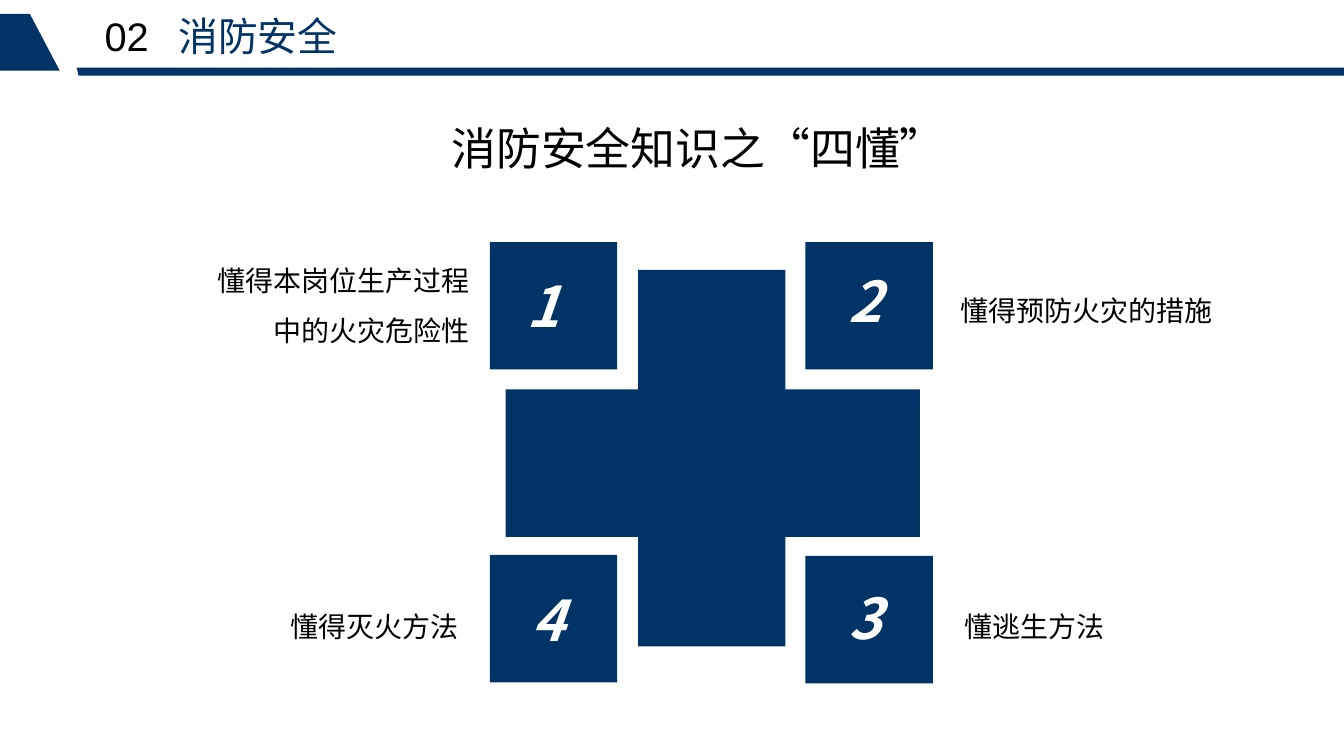
from dataclasses import dataclass

from pptx import Presentation
from pptx.dml.color import RGBColor
from pptx.enum.shapes import MSO_SHAPE as Preset
from pptx.enum.text import MSO_ANCHOR as Anchor, MSO_AUTO_SIZE as AutoSize, PP_ALIGN as Align
from pptx.oxml.ns import qn
from pptx.util import Pt

PX = 9525
NAVY, BLACK, WHITE = "003366", "000000", "FFFFFF"
CJK = "Noto Sans CJK SC"
TILE = 128


@dataclass(frozen=True)
class Box:
    """A rectangle in px."""
    left: int
    top: int
    width: int
    height: int

    def emu(self) -> tuple[int, int, int, int]:
        """Return the rectangle in EMU."""
        return self.left * PX, self.top * PX, self.width * PX, self.height * PX


@dataclass(frozen=True)
class Point:
    """One numbered rule: its tile, its number and its label."""
    number: str
    label: str
    tile: tuple[int, int]
    number_at: tuple[int, int]
    label_box: Box


POINTS = [
    Point("1", "懂得本岗位生产过程中的火灾危险性", (492, 243), (478, 268), Box(195, 243, 286, 111)),
    Point("2", "懂得预防火灾的措施", (809, 243), (801, 263), Box(951, 273, 277, 60)),
    Point("3", "懂逃生方法", (809, 558), (801, 581), Box(957, 590, 162, 60)),
    Point("4", "懂得灭火方法", (492, 557), (483, 583), Box(278, 590, 192, 60)),
]
CROSS = [Box(508, 391, 416, 148), Box(641, 271, 148, 378)]
HEADER_OUTLINES = [
    [(0, 14), (30, 14), (60, 71), (0, 71)],
    [(77, 68), (1350, 68), (1350, 76), (79, 76)],
]


def rgb(colour: str) -> RGBColor:
    """Turn a hex string into a colour."""
    return RGBColor.from_string(colour)


def paint(shape, colour: str) -> None:
    """Give a shape a flat fill without line or shadow."""
    shape.fill.solid()
    shape.fill.fore_color.rgb = rgb(colour)
    shape.line.fill.background()
    shape.shadow.inherit = False


def style_run(run, size: float, colour: str, name: str = CJK, strong: bool = False) -> None:
    """Set size, colour and typeface of a run, bold italic if strong."""
    run.font.size = Pt(size)
    run.font.color.rgb = rgb(colour)
    run.font.bold = run.font.italic = strong
    run.font.name = name
    east_asian = run.font._element.makeelement(qn("a:ea"), {"typeface": name})
    run.font._element.find(qn("a:latin")).addnext(east_asian)


def add_block(slide, box: Box) -> None:
    """Draw a navy rectangle."""
    paint(slide.shapes.add_shape(Preset.RECTANGLE, *box.emu()), NAVY)


def add_outline(slide, corners: list[tuple[int, int]]) -> None:
    """Draw a navy polygon."""
    builder = slide.shapes.build_freeform(*corners[0], scale=PX)
    builder.add_line_segments(corners[1:], close=True)
    paint(builder.convert_to_shape(), NAVY)


def add_text(slide, box: Box, text: str, size: float, colour: str, align: Align,
             spacing: float = 1.0, strong: bool = False, anchor: Anchor = Anchor.TOP) -> None:
    """Add a one-paragraph text box."""
    frame = slide.shapes.add_textbox(*box.emu()).text_frame
    frame.word_wrap = True
    frame.vertical_anchor = anchor
    frame.text = text
    paragraph = frame.paragraphs[0]
    paragraph.alignment = align
    paragraph.line_spacing = spacing
    style_run(paragraph.runs[0], size, colour, strong=strong)


def fill_title(slide, box: Box, number: str, section: str, section_offset: int) -> None:
    """Write section number and name into the title, split by a tab stop."""
    title = slide.shapes.title
    title.left, title.top, title.width, title.height = box.emu()
    frame = title.text_frame
    frame.margin_left = frame.margin_top = frame.margin_right = frame.margin_bottom = 0
    frame.auto_size = AutoSize.NONE
    frame.vertical_anchor = Anchor.MIDDLE
    paragraph = frame.paragraphs[0]
    paragraph.alignment = Align.LEFT
    paragraph.line_spacing = 1.0
    properties = paragraph._p.get_or_add_pPr()
    stops = properties.makeelement(qn("a:tabLst"), {})
    stop = stops.makeelement(qn("a:tab"), {"pos": str(section_offset * PX), "algn": "l"})
    stops.append(stop)
    properties.append(stops)
    for text, colour, name in [(f"{number}\t", BLACK, "Arial"), (section, NAVY, CJK)]:
        run = paragraph.add_run()
        run.text = text
        style_run(run, 30, colour, name)


def main() -> None:
    """Build the slide and save it."""
    deck = Presentation()
    deck.slide_width, deck.slide_height = 1350 * PX, 759 * PX
    slide = deck.slides.add_slide(deck.slide_layouts[5])
    fill_title(slide, Box(105, 12, 822, 48), "02", "消防安全", 74)
    for corners in HEADER_OUTLINES:
        add_outline(slide, corners)
    add_text(slide, Box(444, 116, 575, 64), "消防安全知识之“四懂”", 33.8, BLACK,
             Align.LEFT, anchor=Anchor.MIDDLE)
    for bar in CROSS:
        add_block(slide, bar)
    for point in POINTS:
        add_block(slide, Box(*point.tile, TILE, TILE))
        add_text(slide, Box(*point.number_at, 135, 78), point.number, 42.2, WHITE,
                 Align.CENTER, strong=True)
        add_text(slide, point.label_box, point.label, 21.1, BLACK, Align.RIGHT, spacing=1.5)
    deck.save("out.pptx")


if __name__ == "__main__":
    main()
